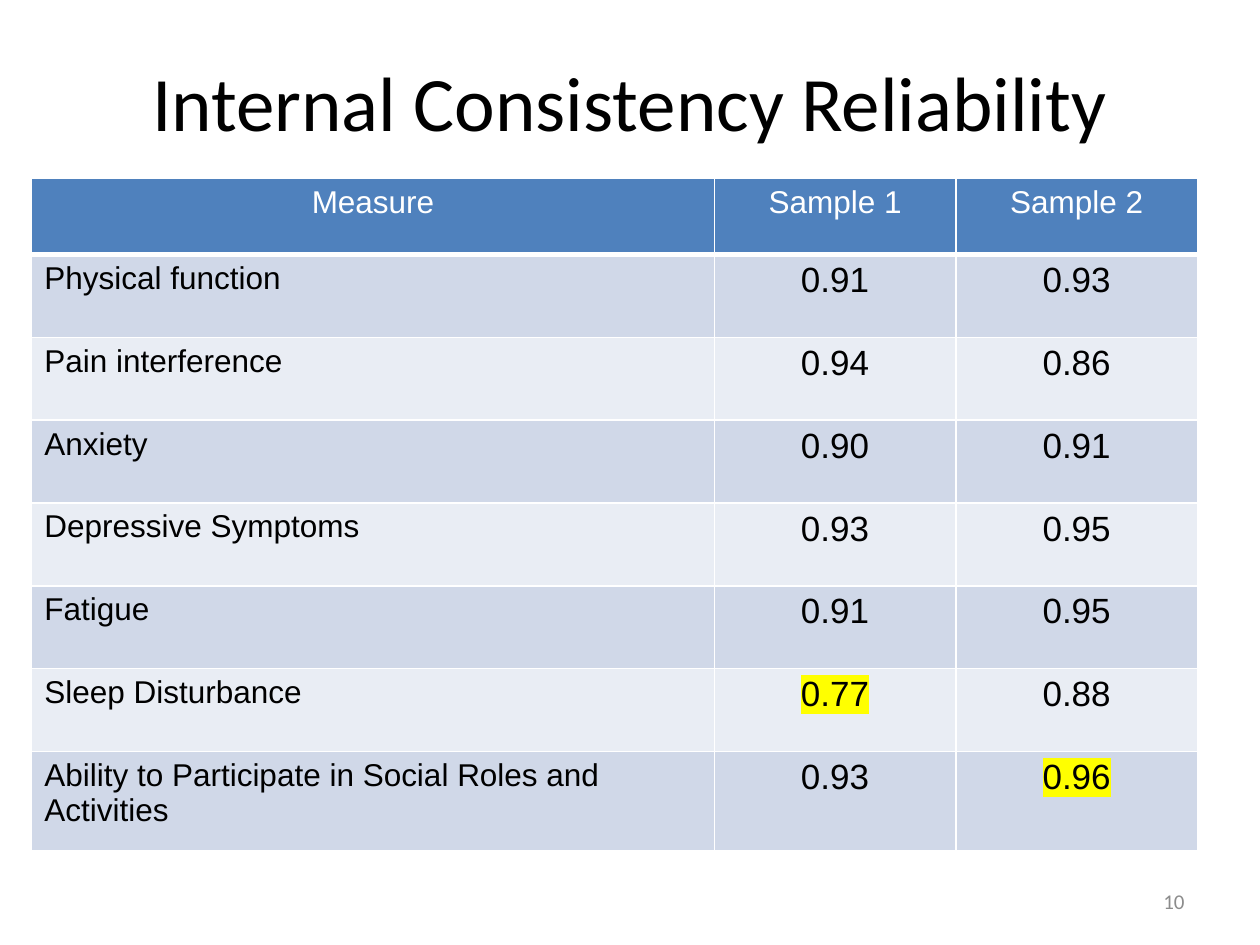
from dataclasses import dataclass

import lxml.etree
import pptx
import pptx.dml.color
import pptx.enum.text
import pptx.oxml.ns
import pptx.util

Cm = pptx.util.Cm
Align = pptx.enum.text.PP_ALIGN
Anchor = pptx.enum.text.MSO_ANCHOR
qn = pptx.oxml.ns.qn


@dataclass(frozen=True)
class Theme:
    heading_font: str = "Calibri"
    table_font: str = "Arial"
    ink: str = "000000"
    white: str = "FFFFFF"
    header_fill: str = "4F81BD"
    bands: tuple[str, str] = ("D0D8E8", "E9EDF4")
    highlight: str = "FFFF00"
    page_ink: str = "8C8C8C"
    title_size: int = 44
    label_size: int = 18
    score_size: int = 20
    page_size: int = 12
    rule: int = 1
    header_rule: int = 3


@dataclass(frozen=True)
class Score:
    value: str
    flagged: bool = False


@dataclass(frozen=True)
class Measure:
    label: str
    scores: tuple[Score, Score]
    height: float = 1.67


THEME = Theme()
HEADINGS = ("Measure", "Sample 1", "Sample 2")
HEADER_HEIGHT = 1.53
COLUMN_WIDTHS = (13.76, 4.87, 4.87)
MEASURES = (
    Measure("Physical function", (Score("0.91"), Score("0.93"))),
    Measure("Pain interference", (Score("0.94"), Score("0.86"))),
    Measure("Anxiety", (Score("0.90"), Score("0.91"))),
    Measure("Depressive Symptoms", (Score("0.93"), Score("0.95"))),
    Measure("Fatigue", (Score("0.91"), Score("0.95"))),
    Measure("Sleep Disturbance", (Score("0.77", flagged=True), Score("0.88"))),
    Measure(
        "Ability to Participate in Social Roles and Activities",
        (Score("0.93"), Score("0.96", flagged=True)),
        height=2.01,
    ),
)


def write(frame, text: str, *, size: int, font: str = THEME.table_font,
          color: str = THEME.ink, align=Align.LEFT, anchor=None,
          highlight: str | None = None) -> None:
    frame.word_wrap = True
    if anchor is not None:
        frame.vertical_anchor = anchor
    paragraph = frame.paragraphs[0]
    paragraph.alignment = align
    run = paragraph.add_run()
    run.text = text
    run.font.size = pptx.util.Pt(size)
    run.font.name = font
    run.font.color.rgb = pptx.dml.color.RGBColor.from_string(color)
    if highlight:
        marker = lxml.etree.Element(qn("a:highlight"))
        lxml.etree.SubElement(marker, qn("a:srgbClr"), val=highlight)
        run.font._element.find(qn("a:solidFill")).addnext(marker)


def paint_cell(cell, fill: str, bottom_rule: int = THEME.rule) -> None:
    properties = cell._tc.get_or_add_tcPr()
    for side in "LRTB":
        points = bottom_rule if side == "B" else THEME.rule
        border = lxml.etree.SubElement(
            properties, qn(f"a:ln{side}"), w=str(pptx.util.Pt(points)))
        line_fill = lxml.etree.SubElement(border, qn("a:solidFill"))
        lxml.etree.SubElement(line_fill, qn("a:srgbClr"), val=THEME.white)
    cell.fill.solid()
    cell.fill.fore_color.rgb = pptx.dml.color.RGBColor.from_string(fill)


def draw_measure(table, row: int, measure: Measure) -> None:
    table.rows[row].height = Cm(measure.height)
    band = THEME.bands[(row - 1) % len(THEME.bands)]
    for cell in table.rows[row].cells:
        paint_cell(cell, band)
    write(table.cell(row, 0).text_frame, measure.label, size=THEME.label_size)
    for column, score in enumerate(measure.scores, start=1):
        write(table.cell(row, column).text_frame, score.value,
              size=THEME.score_size, align=Align.CENTER,
              highlight=THEME.highlight if score.flagged else None)


def draw_reliability(slide) -> None:
    height = HEADER_HEIGHT + sum(measure.height for measure in MEASURES)
    table = slide.shapes.add_table(
        len(MEASURES) + 1, len(HEADINGS),
        Cm(0.64), Cm(3.6), Cm(sum(COLUMN_WIDTHS)), Cm(height)).table
    table.rows[0].height = Cm(HEADER_HEIGHT)
    for column, (heading, width) in enumerate(zip(HEADINGS, COLUMN_WIDTHS)):
        table.columns[column].width = Cm(width)
        cell = table.cell(0, column)
        paint_cell(cell, THEME.header_fill, THEME.header_rule)
        write(cell.text_frame, heading, size=THEME.label_size,
              color=THEME.white, align=Align.CENTER)
    for row, measure in enumerate(MEASURES, start=1):
        draw_measure(table, row, measure)


def main() -> None:
    deck = pptx.Presentation()
    deck.slide_width, deck.slide_height = Cm(25.4), Cm(19.05)
    slide = deck.slides.add_slide(deck.slide_layouts.get_by_name("Title Only"))

    title = slide.shapes.title
    title.left, title.top = Cm(1.27), Cm(0.43)
    title.width, title.height = Cm(22.86), Cm(3.18)
    write(title.text_frame, "Internal Consistency Reliability",
          size=THEME.title_size, font=THEME.heading_font,
          align=Align.CENTER, anchor=Anchor.MIDDLE)

    draw_reliability(slide)

    page_number = slide.shapes.add_textbox(
        Cm(18.2), Cm(17.66), Cm(5.93), Cm(1.01))
    write(page_number.text_frame, "10", size=THEME.page_size,
          font=THEME.heading_font, color=THEME.page_ink,
          align=Align.RIGHT, anchor=Anchor.MIDDLE)

    deck.save("out.pptx")


if __name__ == "__main__":
    main()
